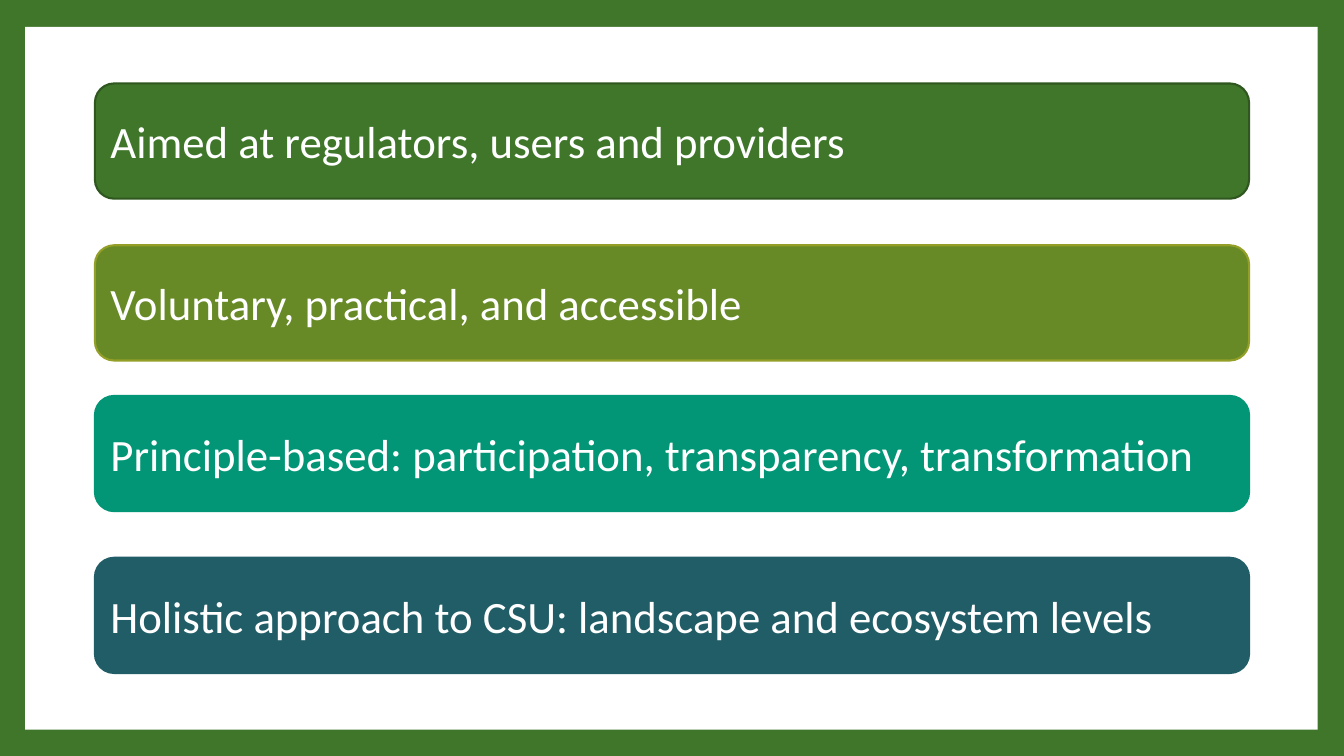
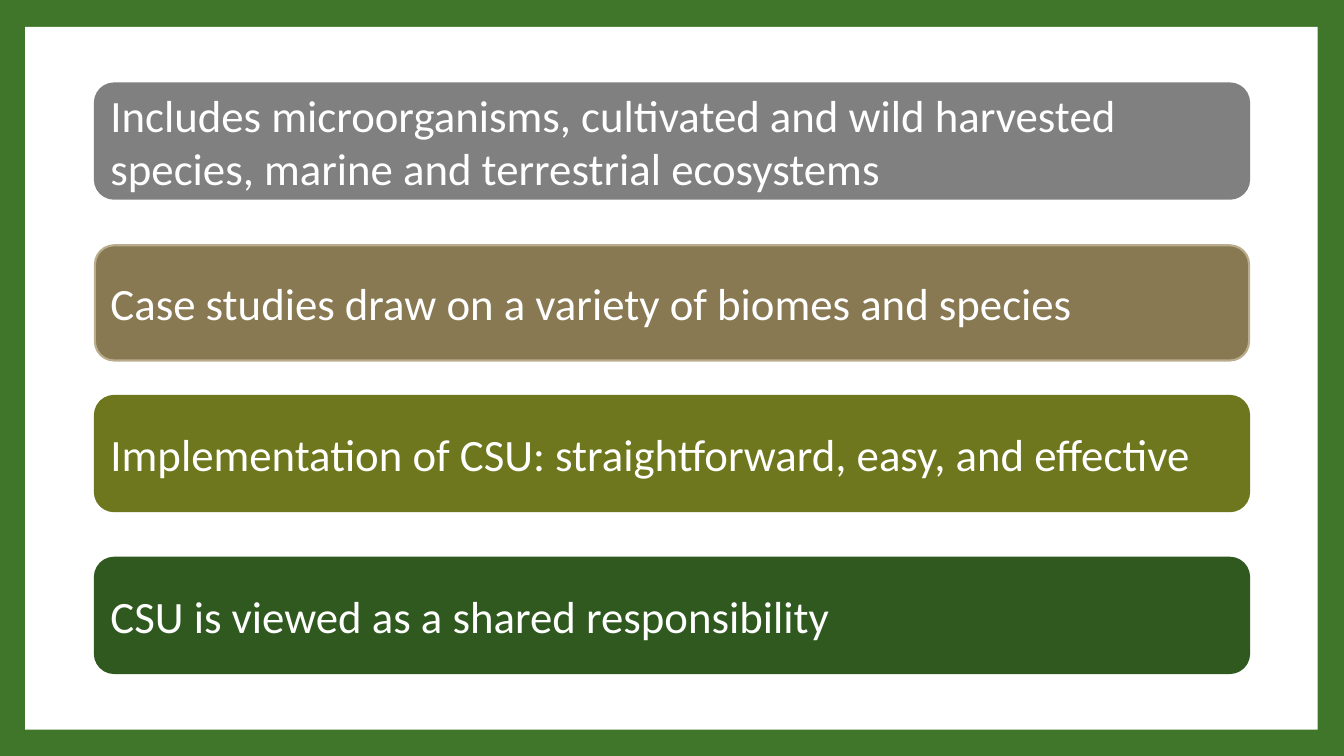
from pptx import Presentation
from pptx.dml.color import RGBColor
from pptx.enum.shapes import MSO_SHAPE
from pptx.enum.text import MSO_ANCHOR, PP_ALIGN
from pptx.util import Pt

WHITE = RGBColor(0xFF, 0xFF, 0xFF)
GREEN = RGBColor(0x3F, 0x76, 0x2A)
DARK_GREEN = RGBColor(0x2F, 0x57, 0x1F)
FOREST = RGBColor(0x2F, 0x59, 0x1F)
OLIVE = RGBColor(0x67, 0x8A, 0x26)
LIME = RGBColor(0x93, 0x9F, 0x26)
TEAL = RGBColor(0x02, 0x96, 0x76)
PETROL = RGBColor(0x21, 0x5D, 0x66)
GRAY = RGBColor(0x80, 0x80, 0x80)
BROWN = RGBColor(0x88, 0x79, 0x52)
SAND = RGBColor(0xBA, 0xAD, 0x8D)
MOSS = RGBColor(0x6E, 0x77, 0x1D)

# Each bar: text, fill, outline
SLIDES = [
    [
        ("Aimed at regulators, users and providers", GREEN, DARK_GREEN),
        ("Voluntary, practical, and accessible", OLIVE, LIME),
        ("Principle-based: participation, transparency, transformation", TEAL, TEAL),
        ("Holistic approach to CSU: landscape and ecosystem levels", PETROL, PETROL),
    ],
    [
        ("Includes microorganisms, cultivated and wild harvested species, "
         "marine and terrestrial ecosystems", GRAY, GRAY),
        ("Case studies draw on a variety of biomes and species", BROWN, SAND),
        ("Implementation of CSU: straightforward, easy, and effective", MOSS, MOSS),
        ("CSU is viewed as a shared responsibility", FOREST, FOREST),
    ],
]

FONT = "Calibri"
PANEL = (18, 19.2, 923.2, 502)
BAR_LEFT, BAR_WIDTH, BAR_HEIGHT = 67.8, 824.4, 82.3
BAR_TOPS = (59.6, 175.2, 282.8, 398.4)


def add_block(page, preset, left, top, width, height, fill):
    block = page.shapes.add_shape(preset, Pt(left), Pt(top), Pt(width), Pt(height))
    block.shadow.inherit = False
    block.fill.solid()
    block.fill.fore_color.rgb = fill
    block.line.fill.background()
    return block


def add_bar(page, top, text, fill, outline):
    bar = add_block(page, MSO_SHAPE.ROUNDED_RECTANGLE,
                    BAR_LEFT, top, BAR_WIDTH, BAR_HEIGHT, fill)
    bar.line.color.rgb = outline
    bar.line.width = Pt(1.5)
    frame = bar.text_frame
    frame.word_wrap = True
    frame.vertical_anchor = MSO_ANCHOR.MIDDLE
    para = frame.paragraphs[0]
    para.text = text
    para.alignment = PP_ALIGN.LEFT
    para.font.name = FONT
    para.font.size = Pt(32)
    para.font.color.rgb = WHITE


def main():
    deck = Presentation()
    deck.slide_width, deck.slide_height = Pt(960), Pt(540)
    backdrop = deck.slide_master.background.fill
    backdrop.solid()
    backdrop.fore_color.rgb = GREEN
    for bars in SLIDES:
        page = deck.slides.add_slide(deck.slide_layouts[6])
        add_block(page, MSO_SHAPE.RECTANGLE, *PANEL, WHITE)
        for top, bar in zip(BAR_TOPS, bars):
            add_bar(page, top, *bar)
    deck.save("out.pptx")


if __name__ == "__main__":
    main()
